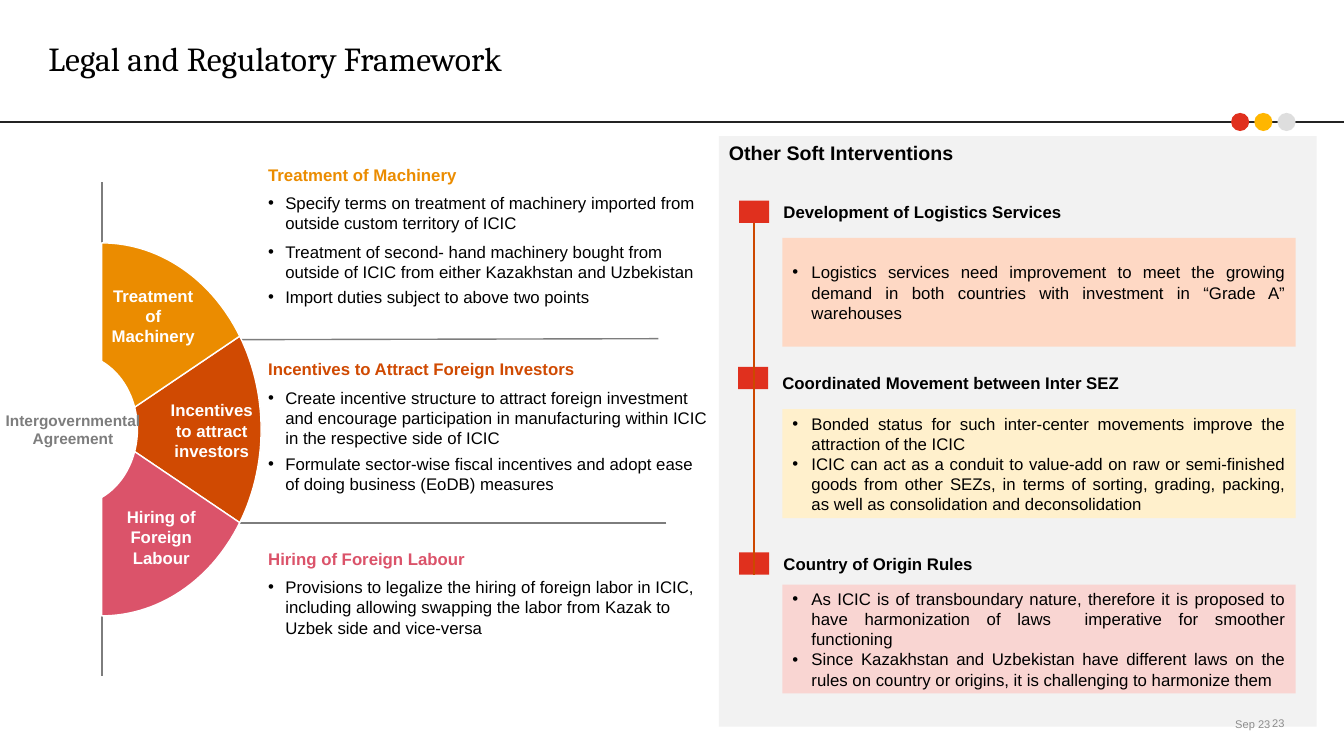
import math
import pptx
import pptx.util
import pptx.dml.color
import pptx.enum.shapes
import pptx.enum.text
import pptx.oxml.ns
import lxml.etree

Inches = pptx.util.Inches
Pt = pptx.util.Pt
RGBColor = pptx.dml.color.RGBColor
Shape = pptx.enum.shapes.MSO_SHAPE
Anchor = pptx.enum.text.MSO_ANCHOR
Align = pptx.enum.text.PP_ALIGN
qn = pptx.oxml.ns.qn

BLACK = RGBColor(0, 0, 0)
WHITE = RGBColor(255, 255, 255)
DARK = RGBColor(0x23, 0x23, 0x23)
GREY = RGBColor(0x7D, 0x7D, 0x7D)
FAINT = RGBColor(0x8C, 0x8C, 0x8C)
SILVER = RGBColor(0xDE, 0xDE, 0xDE)
PANEL = RGBColor(0xF2, 0xF2, 0xF2)
RED = RGBColor(0xE0, 0x30, 0x1E)
YELLOW = RGBColor(0xFF, 0xB6, 0x00)
AMBER = RGBColor(0xEB, 0x8C, 0x00)
RUST = RGBColor(0xD0, 0x4A, 0x02)
STEM = RGBColor(0xCD, 0x48, 0x00)
ROSE = RGBColor(0xDB, 0x53, 0x6A)
PEACH = RGBColor(0xFE, 0xD8, 0xC4)
CREAM = RGBColor(0xFF, 0xF0, 0xCC)
PINK = RGBColor(0xF9, 0xD5, 0xD2)

deck = pptx.Presentation()
deck.slide_width = Inches(13.33)
deck.slide_height = Inches(7.5)
slide = deck.slides.add_slide(deck.slide_layouts[6])
shapes = slide.shapes


def write(area, heads=(), points=(), fill=None, kind=Shape.RECTANGLE, size=12,
          color=BLACK, bold=False, font="Arial", align=Align.LEFT,
          anchor=Anchor.TOP, inset=(0, 0), indent=0.17, gaps=(), wrap=True):
    """Add a box holding heading lines, then black bullet points."""
    area = [Inches(n) for n in area]
    if fill is None:
        box = shapes.add_textbox(*area)
    else:
        box = shapes.add_shape(kind, *area)
        box.shadow.inherit = False
        box.fill.solid()
        box.fill.fore_color.rgb = fill
        box.line.fill.background()
    frame = box.text_frame
    frame.word_wrap = wrap
    frame.vertical_anchor = anchor
    frame.margin_left = frame.margin_right = Inches(inset[0])
    frame.margin_top = frame.margin_bottom = Inches(inset[1])
    for i, text in enumerate([*heads, *points]):
        para = frame.paragraphs[0] if i == 0 else frame.add_paragraph()
        point = i >= len(heads)
        if point:
            props = para._p.get_or_add_pPr()
            props.set("marL", str(Inches(indent)))
            props.set("indent", str(-Inches(indent)))
            lxml.etree.SubElement(props, qn("a:buFont")).set("typeface", "Arial")
            lxml.etree.SubElement(props, qn("a:buChar")).set("char", "•")
        para.alignment = align
        if gaps:
            para.space_after = Pt(gaps[i])
        run = para.add_run()
        run.text = text
        run.font.name = font
        run.font.size = Pt(size)
        run.font.bold = bold and not point
        run.font.color.rgb = BLACK if point else color


def rule(x1, y1, x2, y2, color=GREY, width=1):
    """Add a straight line."""
    line = shapes.add_connector(pptx.enum.shapes.MSO_CONNECTOR.STRAIGHT,
                                Inches(x1), Inches(y1), Inches(x2), Inches(y2))
    line.line.color.rgb = color
    line.line.width = Pt(width)
    lxml.etree.SubElement(line._element.spPr, qn("a:effectLst"))


# Title and header rule with dots
rule(0, 1.21, 13.33, 1.21, DARK, 2)
for i, color in enumerate([RED, YELLOW, SILVER]):
    write((12.21 + 0.23 * i, 1.12, 0.18, 0.18), fill=color, kind=Shape.OVAL)
write((0.48, 0.38, 12.36, 0.4), ["Legal and Regulatory Framework"], size=24,
      font="Cambria", anchor=Anchor.MIDDLE)

# Lines behind the half ring
rule(1.01, 1.81, 1.01, 6.71)
rule(6.53, 3.36, 2.37, 3.37)
rule(6.61, 5.19, 1.49, 5.19)

# Half ring: three wedges of 60 degrees, drawn from the middle outwards
hub = (1.01, 4.26)
for start, color in [(-30, RUST), (30, AMBER), (-90, ROSE)]:
    pen = shapes.build_freeform(Inches(hub[0]), Inches(hub[1]))
    arc = [math.radians(start + step) for step in range(0, 61, 2)]
    pen.add_line_segments([(Inches(hub[0] + 1.58 * math.cos(a)),
                            Inches(hub[1] - 1.85 * math.sin(a))) for a in arc])
    wedge = pen.convert_to_shape()
    wedge.shadow.inherit = False
    wedge.fill.solid()
    wedge.fill.fore_color.rgb = color
    wedge.line.color.rgb = WHITE
    wedge.line.width = Pt(1)

write((0.08, 3.5, 1.29, 1.52), ["Intergovernmental", "Agreement"], fill=WHITE,
      kind=Shape.OVAL, size=11, color=GREY, bold=True, align=Align.CENTER,
      anchor=Anchor.MIDDLE, wrap=False)
for x, y, high, text in [(1.08, 2.96, 0.34, "Treatment of Machinery"),
                         (1.66, 4.02, 0.5, "Incentives to attract investors"),
                         (1.16, 5.08, 0.5, "Hiring of Foreign Labour")]:
    write((x, y, 0.88, high), [text], color=WHITE, bold=True,
          align=Align.CENTER, anchor=Anchor.MIDDLE)

# Details beside the wedges
topics = [
    ((2.66, 1.63, 4.4, 1.45), AMBER, Anchor.TOP, (6, 6, 3.4, 3.4),
     "Treatment of Machinery",
     ["Specify terms on treatment of machinery imported from outside custom territory of ICIC",
      "Treatment of second- hand machinery bought from outside of ICIC from either Kazakhstan and Uzbekistan",
      "Import duties subject to above two points"]),
    ((2.66, 3.4, 4.4, 1.66), RUST, Anchor.MIDDLE, (6, 4, 4),
     "Incentives to Attract Foreign Investors",
     ["Create incentive structure to attract foreign investment and encourage participation in manufacturing within ICIC in the respective side of ICIC",
      "Formulate sector-wise fiscal incentives and adopt ease of doing business (EoDB) measures"]),
    ((2.66, 5.44, 4.32, 1.45), ROSE, Anchor.TOP, (6, 6),
     "Hiring of Foreign Labour",
     ["Provisions to legalize the hiring of foreign labor in ICIC, including allowing swapping the labor from Kazak to Uzbek side and vice-versa"]),
]
for area, color, anchor, gaps, head, points in topics:
    write(area, [head], points, color=color, bold=True, anchor=anchor, gaps=gaps)

# Right panel with its timeline
write((7.13, 1.35, 5.93, 5.86), ["Other Soft Interventions"], fill=PANEL,
      size=14, bold=True, inset=(0.1, 0.05))
for x, y in [(7.33, 1.99), (7.32, 3.64), (7.33, 5.48)]:
    write((x, y, 0.3, 0.22), fill=RED)
rule(7.48, 2.21, 7.48, 5.7, STEM)

steps = [
    (7.77, 2, 2.36, PEACH, "Development of Logistics Services",
     ["Logistics services need improvement to meet the growing demand in both countries with investment in “Grade A” warehouses"]),
    (7.76, 3.7, 4.06, CREAM, "Coordinated Movement between Inter SEZ",
     ["Bonded status for such inter-center movements improve the attraction of the ICIC",
      "ICIC can act as a conduit to value-add on raw or semi-finished goods from other SEZs, in terms of sorting, grading, packing, as well as consolidation and deconsolidation"]),
    (7.77, 5.49, 5.8, PINK, "Country of Origin Rules",
     ["As ICIC is of transboundary nature, therefore it is proposed to have harmonization of laws  imperative for smoother functioning",
      "Since Kazakhstan and Uzbekistan have different laws on the rules on country or origins, it is challenging to harmonize them"]),
]
for x, y, top, fill, head, points in steps:
    write((x, y, 4.59, 0.2), [head], bold=True)
    write((7.76, top, 5.09, 1.08), points=points, fill=fill, indent=0.19,
          align=Align.JUSTIFY, anchor=Anchor.MIDDLE, inset=(0.1, 0.05))

# Footer: date and page number
write((10.67, 7.1, 1.93, 0.15), ["Sep 23"], size=7.9, color=FAINT,
      align=Align.RIGHT, anchor=Anchor.BOTTOM)
write((10.92, 7.1, 1.93, 0.15), ["23"], size=7.9, color=FAINT,
      align=Align.RIGHT, anchor=Anchor.MIDDLE, inset=(0.11, 0.06))

deck.save("out.pptx")
